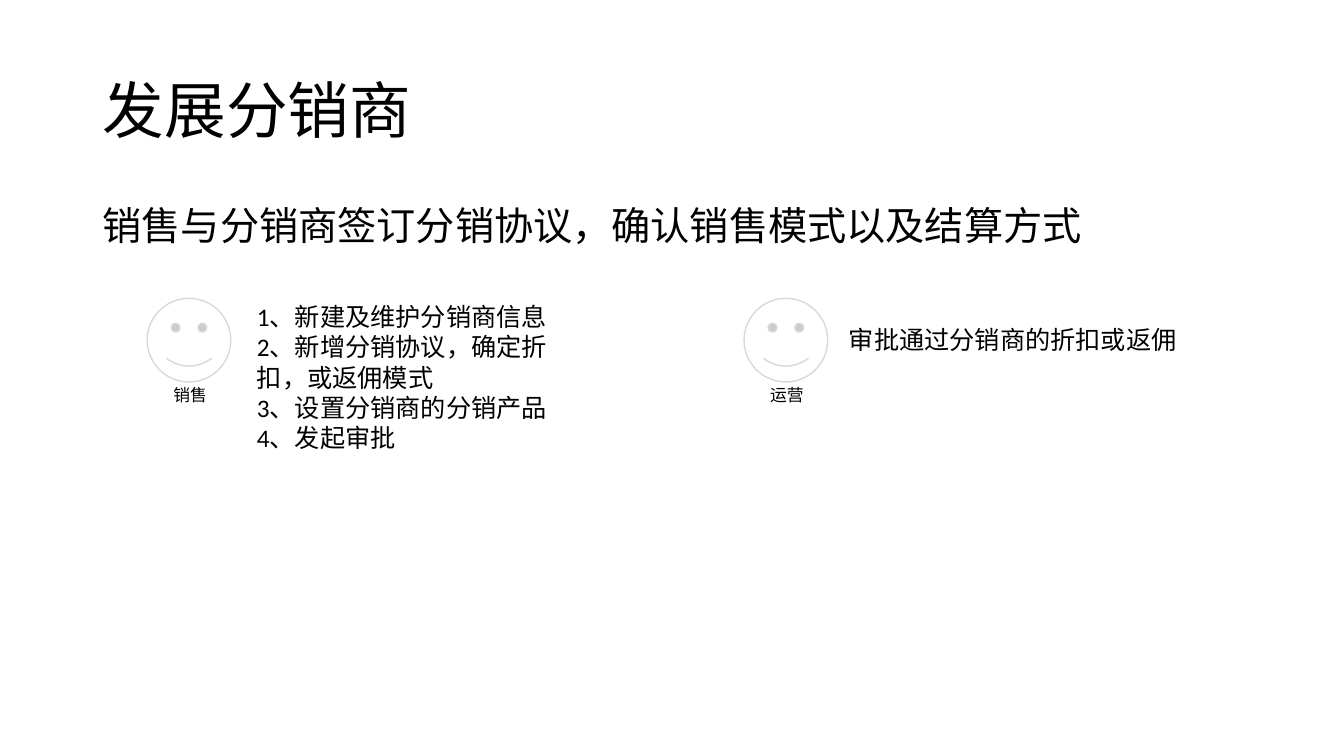
import pptx
import pptx.util
import pptx.dml.color
import pptx.enum.shapes
import pptx.enum.text
import pptx.oxml
import pptx.oxml.ns

Inches, Pt = pptx.util.Inches, pptx.util.Pt
ALIGN = pptx.enum.text.PP_ALIGN
ANCHOR = pptx.enum.text.MSO_ANCHOR

WIDTH, HEIGHT = 13.33, 7.5
MARGIN = 0.92
CONTENT_WIDTH = WIDTH - 2 * MARGIN
FACE = 0.83
FONT = "Calibri"
COLORS = {"text": "000000", "face": "FFFFFF", "outline": "D9D9D9"}


def rgb(name):
    return pptx.dml.color.RGBColor.from_string(COLORS[name])


def write(frame, lines, size, align=ALIGN.LEFT, spacing=1.0, anchor=ANCHOR.TOP, wrap=True):
    """Fill a text frame with one paragraph per line."""
    frame.word_wrap = wrap
    frame.vertical_anchor = anchor
    frame.text = "\n".join(lines)
    for paragraph in frame.paragraphs:
        paragraph.alignment = align
        paragraph.line_spacing = spacing
        paragraph.font.size = Pt(size)
        paragraph.font.name = FONT
        paragraph.font.color.rgb = rgb("text")


def add_text(shapes, box, lines, size, **style):
    frame = shapes.add_textbox(*map(Inches, box)).text_frame
    write(frame, lines, size, **style)


def add_heading(slide, box, text):
    title = slide.shapes.title
    title.left, title.top, title.width, title.height = map(Inches, box)
    write(title.text_frame, [text], 44, spacing=0.9, anchor=ANCHOR.MIDDLE)


def add_summary(slide, box, text):
    """Single bulleted line with a hanging indent."""
    frame = slide.shapes.add_textbox(*map(Inches, box)).text_frame
    properties = frame.paragraphs[0]._p.get_or_add_pPr()
    properties.set("marL", str(Inches(0.25)))
    properties.set("indent", str(-Inches(0.25)))
    for tag, attribute, value in (("buFont", "typeface", "Arial"), ("buChar", "char", "•")):
        bullet = pptx.oxml.parse_xml(
            f'<a:{tag} {pptx.oxml.ns.nsdecls("a")} {attribute}="{value}"/>')
        properties.append(bullet)
    write(frame, [text], 28, spacing=0.9)


def add_role(slide, left, top, role):
    """Smiling face with the role's name centred below it."""
    group = slide.shapes.add_group_shape()
    face = group.shapes.add_shape(
        pptx.enum.shapes.MSO_SHAPE.SMILEY_FACE,
        Inches(left), Inches(top), Inches(FACE), Inches(FACE))
    face.shadow.inherit = False
    face.fill.solid()
    face.fill.fore_color.rgb = rgb("face")
    face.line.color.rgb = rgb("outline")
    face.line.width = Pt(1)
    add_text(group.shapes, (left - 0.07, top + 0.81, 0.99, 0.3), [role], 12,
             align=ALIGN.CENTER)


def add_duties(slide, box, duties, wrap=True):
    add_text(slide.shapes, box, duties, 18, wrap=wrap)


def build_slide(presentation):
    slide = presentation.slides.add_slide(presentation.slide_layouts[5])
    add_heading(slide, (MARGIN, 0.4, CONTENT_WIDTH, 1.45), "发展分销商")
    add_summary(slide, (MARGIN, 2, CONTENT_WIDTH, 0.66),
                "销售与分销商签订分销协议，确认销售模式以及结算方式")

    # Sales on the left, operations on the right
    roles_top, sales_left, operations_left = 2.96, 1.46, 7.38
    add_role(slide, sales_left, roles_top, "销售")
    add_duties(slide, (sales_left + 0.99, roles_top - 0.02, 3.08, 1.92), [
        "1、新建及维护分销商信息",
        "2、新增分销协议，确定折扣，或返佣模式",
        "3、设置分销商的分销产品",
        "4、发起审批",
    ])
    add_role(slide, operations_left, roles_top, "运营")
    add_duties(slide, (operations_left + 0.94, roles_top + 0.21, 3.48, 0.4),
               ["审批通过分销商的折扣或返佣"], wrap=False)


def main():
    presentation = pptx.Presentation()
    presentation.slide_width = Inches(WIDTH)
    presentation.slide_height = Inches(HEIGHT)
    build_slide(presentation)
    presentation.save("out.pptx")


if __name__ == "__main__":
    main()
